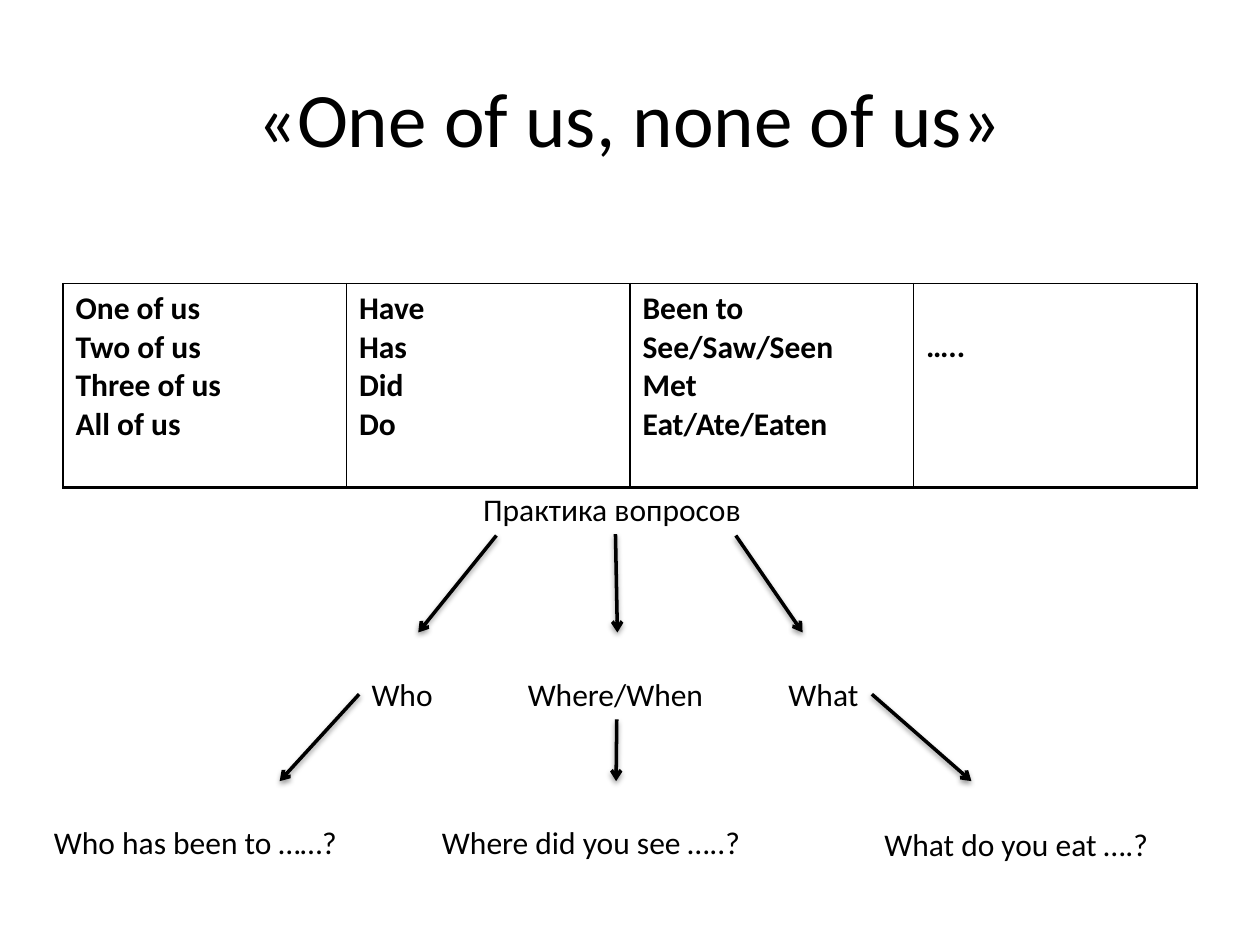
from lxml import etree
from pptx import Presentation
from pptx.dml.color import RGBColor
from pptx.enum.shapes import MSO_CONNECTOR
from pptx.enum.text import MSO_ANCHOR, MSO_AUTO_SIZE, PP_ALIGN
from pptx.oxml import parse_xml
from pptx.oxml.ns import nsdecls, qn
from pptx.util import Inches, Pt

STRAIGHT = MSO_CONNECTOR.STRAIGHT
MIDDLE = MSO_ANCHOR.MIDDLE
FIT_SHAPE = MSO_AUTO_SIZE.SHAPE_TO_FIT_TEXT
LEFT, CENTER = PP_ALIGN.LEFT, PP_ALIGN.CENTER
LEFT_SIDE, BOTTOM_SIDE, RIGHT_SIDE = 1, 2, 3

BLACK = RGBColor(0, 0, 0)
BODY = {"name": "Calibri", "size": Pt(18), "bold": False}
STRONG = {**BODY, "bold": True}
HEADING = {**BODY, "size": Pt(44)}
BORDERS = {"a:lnL": 1, "a:lnR": 1, "a:lnT": 1, "a:lnB": 2}

WORD_COLUMNS = [
    ["One of us", "Two of us", "Three of us", "All of us"],
    ["Have", "Has", "Did", "Do"],
    ["Been to", "See/Saw/Seen", "Met", "Eat/Ate/Eaten"],
    ["….."],
]
QUESTION_WORDS = [
    ("Who", 2.85, 0.69, LEFT_SIDE, (3.94, 3.32), 2.22),
    ("Where/When", 4.09, 1.61, BOTTOM_SIDE, (4.89, 4.9), 4.89),
    ("What", 6.16, 0.76, RIGHT_SIDE, (5.84, 6.37), 7.71),
]
EXAMPLES = [
    ("Who has been to ……?", 0.33, 6.48, 2.49),
    ("Where did you see …..?", 3.41, 6.48, 2.6),
    ("What do you eat ….?", 6.92, 6.5, 2.32),
]


def write_lines(frame, lines, font_format, align=LEFT):
    for index, line in enumerate(lines):
        para = frame.paragraphs[0] if index == 0 else frame.add_paragraph()
        para.alignment = align
        span = para.add_run()
        span.text = line
        span.font.color.rgb = BLACK
        for name, value in font_format.items():
            setattr(span.font, name, value)


def place_title(page, left, top, width, height):
    title = page.shapes.title
    place = {"left": left, "top": top, "width": width, "height": height}
    for name, value in place.items():
        setattr(title, name, Inches(value))
    title.text_frame.vertical_anchor = MIDDLE
    write_lines(title.text_frame, ["«One of us, none of us»"], HEADING, CENTER)


def draw_borders(cell):
    properties = cell._tc.get_or_add_tcPr()
    for tag, points in BORDERS.items():
        border = etree.SubElement(properties, qn(tag), w=str(Pt(points)))
        fill = etree.SubElement(border, qn("a:solidFill"))
        etree.SubElement(fill, qn("a:srgbClr"), val=str(BLACK))


def place_word_table(page, left, top, width, height):
    box = [Inches(value) for value in (left, top, width, height)]
    table = page.shapes.add_table(1, len(WORD_COLUMNS), *box).table
    table.first_row = table.horz_banding = False
    for cell, words in zip(table.rows[0].cells, WORD_COLUMNS):
        draw_borders(cell)
        cell.fill.background()
        write_lines(cell.text_frame, words, STRONG)
    table.cell(0, len(WORD_COLUMNS) - 1).margin_top = Inches(0.35)


def add_label(page, text, left, top, width, wrap=False, align=LEFT):
    box = [Inches(value) for value in (left, top, width, 0.4)]
    label = page.shapes.add_textbox(*box)
    label.text_frame.word_wrap = wrap
    label.text_frame.auto_size = FIT_SHAPE
    write_lines(label.text_frame, [text], BODY, align)
    return label


def add_arrow(page, start, end):
    points = [Inches(value) for value in (*start, *end)]
    arrow = page.shapes.add_connector(STRAIGHT, *points)
    arrow.line.color.rgb = BLACK
    arrow.line.width = Pt(2)
    etree.SubElement(arrow.line._get_or_add_ln(), qn("a:tailEnd"), type="arrow")
    arrow._element.spPr.append(parse_xml(
        f'<a:effectLst {nsdecls("a")}><a:outerShdw blurRad="{Pt(3.1)}" '
        f'dist="{Pt(1.6)}" dir="5400000" rotWithShape="0">'
        f'<a:srgbClr val="{BLACK}"><a:alpha val="38000"/></a:srgbClr>'
        '</a:outerShdw></a:effectLst>'))
    return arrow


def place_question_tree(page, left, top, width):
    root = add_label(page, "Практика вопросов ", left, top, width, True, CENTER)
    word_top, root_bottom = top + 1.47, top + 0.41
    for text, word_left, word_width, side, (start, end), tip in QUESTION_WORDS:
        word = add_label(page, text, word_left, word_top, word_width)
        branch = add_arrow(page, (start, root_bottom), (end, top + 1.18))
        if side == BOTTOM_SIDE:
            branch.begin_connect(root, BOTTOM_SIDE)
        leaf = add_arrow(page, (word_left, word_top), (tip, top + 2.36))
        leaf.begin_connect(word, side)
    for text, example_left, example_top, example_width in EXAMPLES:
        add_label(page, text, example_left, example_top, example_width)


def main():
    deck = Presentation()
    deck.slide_width, deck.slide_height = Inches(10), Inches(7.5)
    page = deck.slides.add_slide(deck.slide_layouts.get_by_name("Title Only"))
    place_title(page, 0.5, 0.3, 9, 1.25)
    place_word_table(page, 0.5, 2.25, 9, 1.62)
    place_question_tree(page, 3.41, 3.84, 2.95)
    deck.save("out.pptx")


if __name__ == "__main__":
    main()
